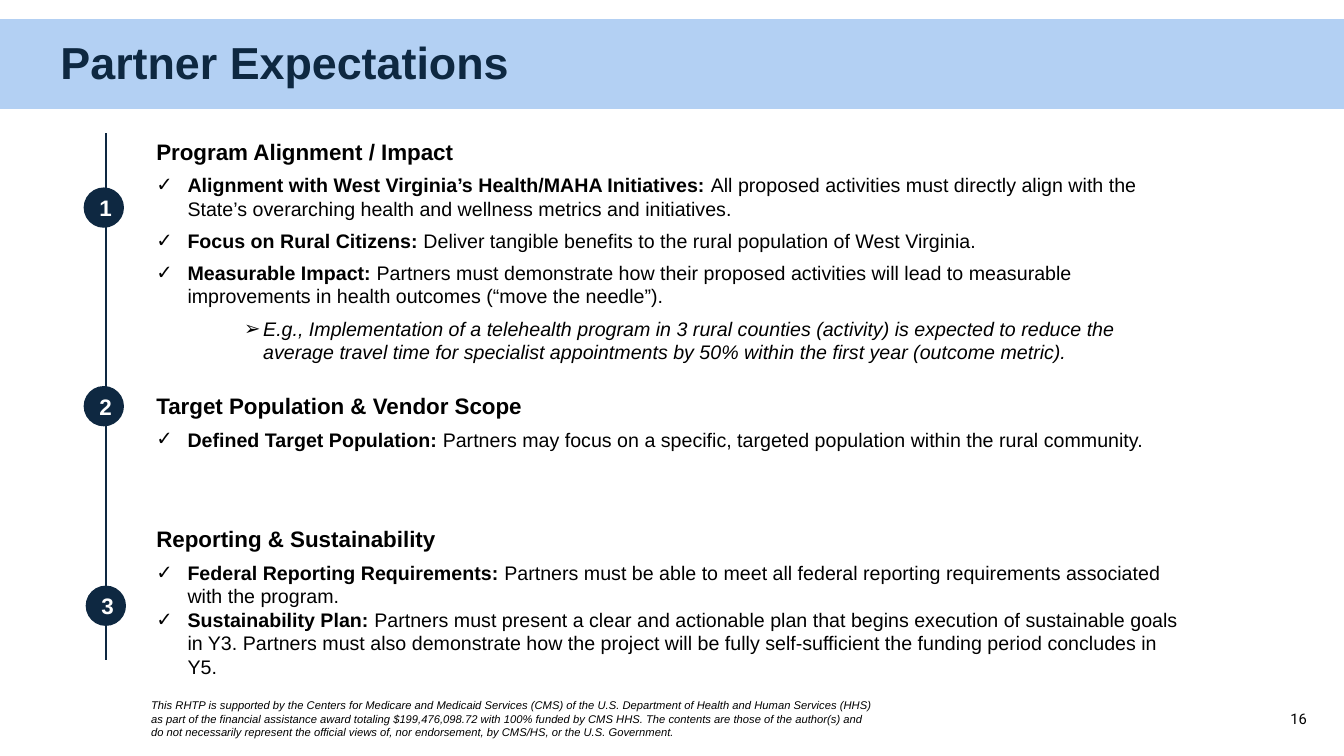
from dataclasses import dataclass

from lxml.etree import SubElement
from pptx import Presentation
from pptx.dml.color import RGBColor
from pptx.enum.shapes import MSO_CONNECTOR, MSO_SHAPE
from pptx.enum.text import MSO_ANCHOR, MSO_AUTO_SIZE, PP_ALIGN
from pptx.oxml.ns import qn
from pptx.util import Emu, Pt

COLORS = {"navy": "0E2841", "sky": "B3D0F3", "black": "000000", "white": "FFFFFF"}
FONT = "Arial"
EMU_PER_PX = 9144  # 100 px to the inch


@dataclass
class Box:
    left: int
    top: int
    width: int
    height: int


@dataclass
class Item:
    lead: str
    detail: str


@dataclass
class Section:
    box: Box
    heading: str
    item_gap: int
    items: list[Item]


@dataclass
class Marker:
    label: str
    left: int
    top: int


SECTIONS = [
    Section(Box(145, 132, 1044, 188), "Program Alignment / Impact", 6, [
        Item("Alignment with West Virginia’s Health/MAHA Initiatives: ",
             "All proposed activities must directly align with the State’s overarching "
             "health and wellness metrics and initiatives."),
        Item("Focus on Rural Citizens: ",
             "Deliver tangible benefits to the rural population of West Virginia."),
        Item("Measurable Impact: ",
             "Partners must demonstrate how their proposed activities will lead to "
             "measurable improvements in health outcomes (“move the needle”)."),
    ]),
    Section(Box(145, 384, 1044, 69), "Target Population & Vendor Scope", 0, [
        Item("Defined Target Population: ",
             "Partners may focus on a specific, targeted population within the rural community."),
    ]),
    Section(Box(145, 516, 1044, 140), "Reporting & Sustainability", 0, [
        Item("Federal Reporting Requirements: ",
             "Partners must be able to meet all federal reporting requirements associated "
             "with the program."),
        Item("Sustainability Plan: ",
             "Partners must present a clear and actionable plan that begins execution of "
             "sustainable goals in Y3. Partners must also demonstrate how the project will be "
             "fully self-sufficient the funding period concludes in Y5."),
    ]),
]
MARKERS = [Marker("1", 83, 186), Marker("2", 83, 383), Marker("3", 85, 581)]
EXAMPLE = (
    "E.g., Implementation of a telehealth program in 3 rural counties (activity) is expected "
    "to reduce the average travel time for specialist appointments by 50% within the first "
    "year (outcome metric)."
)
DISCLAIMER = (
    "This RHTP is supported by the Centers for Medicare and Medicaid Services (CMS) of the "
    "U.S. Department of Health and Human Services (HHS) as part of the financial assistance "
    "award totaling $199,476,098.72 with 100% funded by CMS HHS. The contents are those of "
    "the author(s) and do not necessarily represent the official views of, nor endorsement, "
    "by CMS/HS, or the U.S. Government."
)


def px(length: int) -> Emu:
    return Emu(length * EMU_PER_PX)


def color(name: str) -> RGBColor:
    return RGBColor.from_string(COLORS[name])


def place(shape, box: Box) -> None:
    shape.left, shape.top = px(box.left), px(box.top)
    shape.width, shape.height = px(box.width), px(box.height)


def prepare_frame(shape, anchor=MSO_ANCHOR.TOP):
    frame = shape.text_frame
    frame.word_wrap = True
    frame.auto_size = MSO_AUTO_SIZE.NONE
    frame.vertical_anchor = anchor
    return frame


def add_span(para, text: str, size: float, ink: str = "black", bold: bool = False,
             italic: bool = False, face: str = FONT) -> None:
    span = para.add_run()
    span.text = text
    span.font.name, span.font.size = face, Pt(size)
    span.font.bold, span.font.italic = bold, italic
    span.font.color.rgb = color(ink)


def format_list_para(para, bullet: str = "", indent: int = 0, gap: int = 0) -> None:
    properties = para._p.get_or_add_pPr()
    properties.set("marL", str(px(indent)))
    properties.set("indent", str(px(-indent)))
    if bullet:
        bullet_color = SubElement(properties, qn("a:buClr"))
        SubElement(bullet_color, qn("a:srgbClr")).set("val", COLORS["black"])
        SubElement(properties, qn("a:buFont")).set("typeface", FONT)
        SubElement(properties, qn("a:buChar")).set("char", bullet)
    else:
        SubElement(properties, qn("a:buNone"))
    para.alignment = PP_ALIGN.LEFT
    para.space_before, para.space_after = Pt(0), Pt(gap)


def add_solid(page, kind, box: Box, fill: str):
    shape = page.shapes.add_shape(kind, *map(px, (box.left, box.top, box.width, box.height)))
    shape.shadow.inherit = False
    shape.fill.solid()
    shape.fill.fore_color.rgb = color(fill)
    shape.line.fill.background()
    return shape


def add_text_box(page, box: Box, anchor=MSO_ANCHOR.TOP):
    shape = page.shapes.add_textbox(*map(px, (box.left, box.top, box.width, box.height)))
    return prepare_frame(shape, anchor).paragraphs[0]


def fill_section(body, section: Section) -> None:
    place(body, section.box)
    frame = prepare_frame(body)
    heading = frame.paragraphs[0]
    format_list_para(heading, gap=6)
    add_span(heading, section.heading, 16, bold=True)
    for item in section.items:
        para = frame.add_paragraph()
        format_list_para(para, "✓", 31, section.item_gap)
        add_span(para, item.lead, 14, bold=True)
        add_span(para, item.detail, 14)


def add_marker(page, marker: Marker) -> None:
    circle = add_solid(page, MSO_SHAPE.OVAL, Box(marker.left, marker.top, 40, 40), "navy")
    para = prepare_frame(circle, MSO_ANCHOR.MIDDLE).paragraphs[0]
    para.alignment = PP_ALIGN.CENTER
    add_span(para, marker.label, 16, "white", bold=True)


def main() -> None:
    deck = Presentation()
    deck.slide_width, deck.slide_height = px(1333), px(750)
    # The comparison layout offers a title and four bodies
    page = deck.slides.add_slide(deck.slide_layouts[4])
    title, *bodies = page.placeholders

    # Title on its band
    band = add_solid(page, MSO_SHAPE.RECTANGLE, Box(0, 19, 1333, 89), "sky")
    page.shapes._spTree.insert(2, band._element)
    place(title, Box(50, 19, 1261, 90))
    title_para = prepare_frame(title, MSO_ANCHOR.MIDDLE).paragraphs[0]
    title_para.alignment, title_para.line_spacing = PP_ALIGN.LEFT, 0.9
    add_span(title_para, "Partner Expectations", 32, "navy", bold=True)

    # Sections and the example
    for body, section in zip(bodies, SECTIONS):
        fill_section(body, section)
    example = bodies[-1]
    place(example, Box(232, 309, 910, 57))
    example_para = prepare_frame(example).paragraphs[0]
    format_list_para(example_para, "➢", 19)
    add_span(example_para, EXAMPLE, 14, italic=True)

    # Timeline
    timeline = page.shapes.add_connector(
        MSO_CONNECTOR.STRAIGHT, px(105), px(132), px(105), px(655))
    timeline.line.color.rgb = color("navy")
    timeline.line.width = Pt(1)
    SubElement(timeline._element.spPr, qn("a:effectLst"))
    for marker in MARKERS:
        add_marker(page, marker)

    # Footer
    add_span(add_text_box(page, Box(140, 688, 742, 50)), DISCLAIMER, 8, italic=True)
    number = add_text_box(page, Box(995, 693, 311, 40), MSO_ANCHOR.MIDDLE)
    number.alignment = PP_ALIGN.RIGHT
    add_span(number, "16", 10.5, face="Roboto")

    deck.save("out.pptx")


if __name__ == "__main__":
    main()
